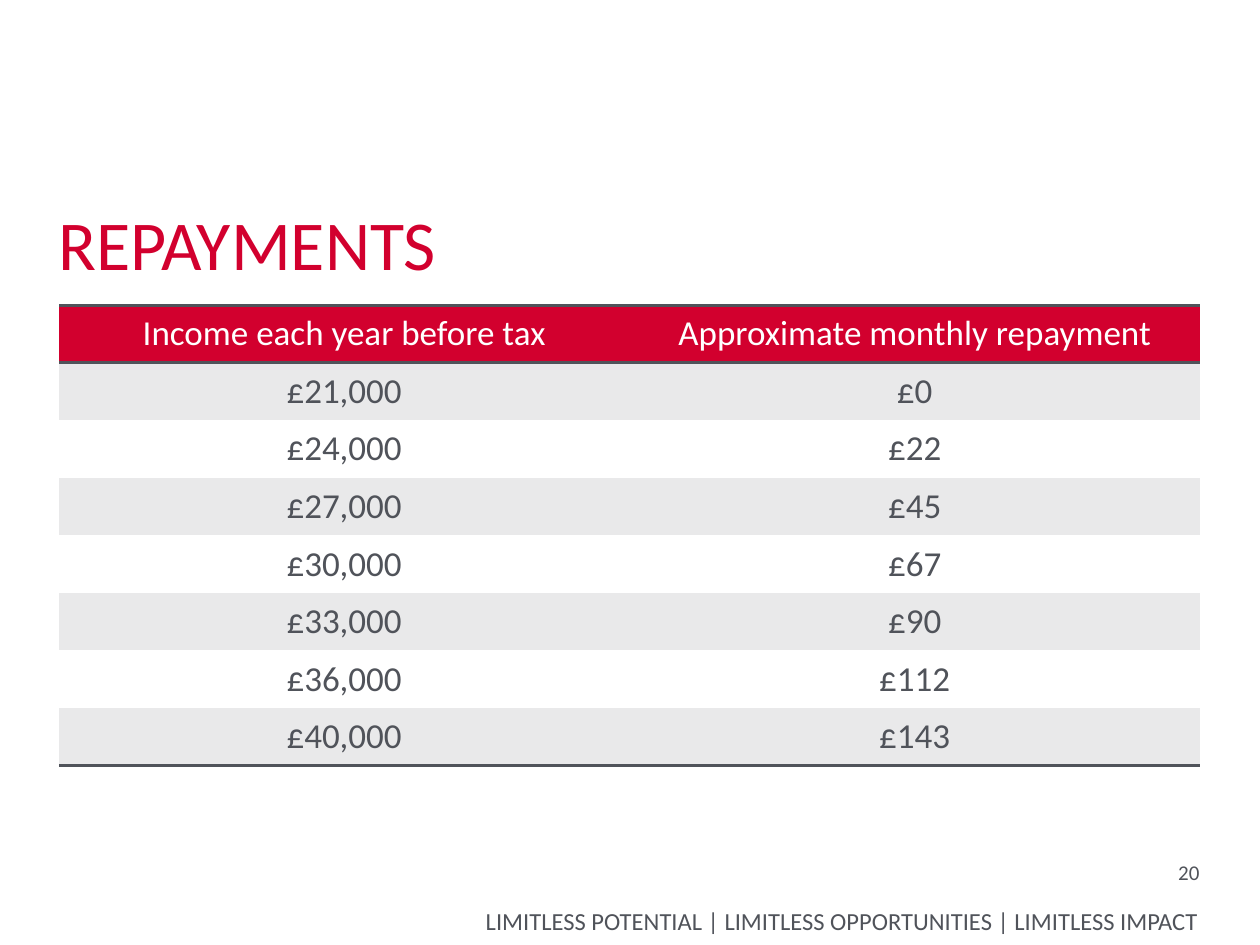
from lxml.etree import SubElement
from pptx import Presentation
from pptx.dml.color import RGBColor
from pptx.enum.text import MSO_ANCHOR as Anchor, PP_ALIGN as Align
from pptx.oxml.ns import qn
from pptx.util import Cm, Pt

RED = RGBColor(0xD2, 0x00, 0x2E)
SLATE = RGBColor(0x50, 0x53, 0x5A)
BAND = RGBColor(0xE9, 0xE9, 0xEA)
WHITE = RGBColor(0xFF, 0xFF, 0xFF)

REPAYMENTS = [
    ("Income each year before tax", "Approximate monthly repayment"),
    ("£21,000", "£0"),
    ("£24,000", "£22"),
    ("£27,000", "£45"),
    ("£30,000", "£67"),
    ("£33,000", "£90"),
    ("£36,000", "£112"),
    ("£40,000", "£143"),
]


def set_attributes(target, values):
    for name, value in values.items():
        setattr(target, name, value)


def draw_borders(cell, ruled_sides):
    """Rule the given sides of a cell and clear the others."""
    properties = cell._tc.get_or_add_tcPr()
    for side in "LRTB":
        line = SubElement(properties, qn(f"a:ln{side}"), w=str(Pt(2)))
        if side in ruled_sides:
            fill = SubElement(line, qn("a:solidFill"))
            SubElement(fill, qn("a:srgbClr"), val=str(SLATE))
        else:
            SubElement(line, qn("a:noFill"))


class SlideBuilder:
    font = "Calibri"
    frame_format = {
        "margin_left": 0, "margin_right": 0, "margin_top": 0,
        "margin_bottom": 0, "word_wrap": True,
    }

    def __init__(self, slide):
        self.slide = slide

    def add_words(self, frame, text, size, color, align):
        paragraph = frame.paragraphs[0]
        paragraph.alignment = align
        run = paragraph.add_run()
        run.text = text
        set_attributes(run.font, {"name": self.font, "size": Pt(size), "bold": False})
        run.font.color.rgb = color

    def title(self, text, left, top, width, height):
        heading = self.slide.shapes.title
        set_attributes(heading, {"left": left, "top": top, "width": width, "height": height})
        set_attributes(heading.text_frame, self.frame_format | {"vertical_anchor": Anchor.BOTTOM})
        self.add_words(heading.text_frame, text, 40, RED, Align.LEFT)

    def text(self, text, left, top, width, height, size, anchor=Anchor.TOP):
        frame = self.slide.shapes.add_textbox(left, top, width, height).text_frame
        set_attributes(frame, self.frame_format | {"vertical_anchor": anchor})
        self.add_words(frame, text, size, SLATE, Align.RIGHT)

    def table(self, rows, left, top, width, row_height):
        last = len(rows) - 1
        table = self.slide.shapes.add_table(
            len(rows), len(rows[0]), left, top, width, row_height * len(rows)).table
        margins = dict.fromkeys(
            ("margin_left", "margin_right", "margin_top", "margin_bottom"), Cm(0.15))
        for r, values in enumerate(rows):
            ruled_sides = ("T" if r <= 1 else "") + ("B" if r in (0, last) else "")
            background = RED if r == 0 else BAND if r % 2 else WHITE
            for c, value in enumerate(values):
                cell = table.cell(r, c)
                set_attributes(cell, margins)
                draw_borders(cell, ruled_sides)
                cell.fill.solid()
                cell.fill.fore_color.rgb = background
                self.add_words(cell.text_frame, value, 20, SLATE if r else WHITE, Align.CENTER)


def main():
    presentation = Presentation()
    set_attributes(presentation, {"slide_width": Cm(25.4), "slide_height": Cm(19.05)})
    builder = SlideBuilder(presentation.slides.add_slide(presentation.slide_layouts[5]))
    builder.text("LIMITLESS POTENTIAL | LIMITLESS OPPORTUNITIES | LIMITLESS IMPACT",
                 Cm(5.36), Cm(18.26), Cm(18.8), Cm(0.6), 14, Anchor.BOTTOM)
    builder.title("REPAYMENTS", Cm(1.18), Cm(3.43), Cm(23), Cm(2.31))
    builder.table(REPAYMENTS, Cm(1.19), Cm(6.15), Cm(23), Cm(1.16))
    builder.text("20", Cm(22.3), Cm(17.32), Cm(1.88), Cm(0.71), 12)
    presentation.save("out.pptx")


if __name__ == "__main__":
    main()
